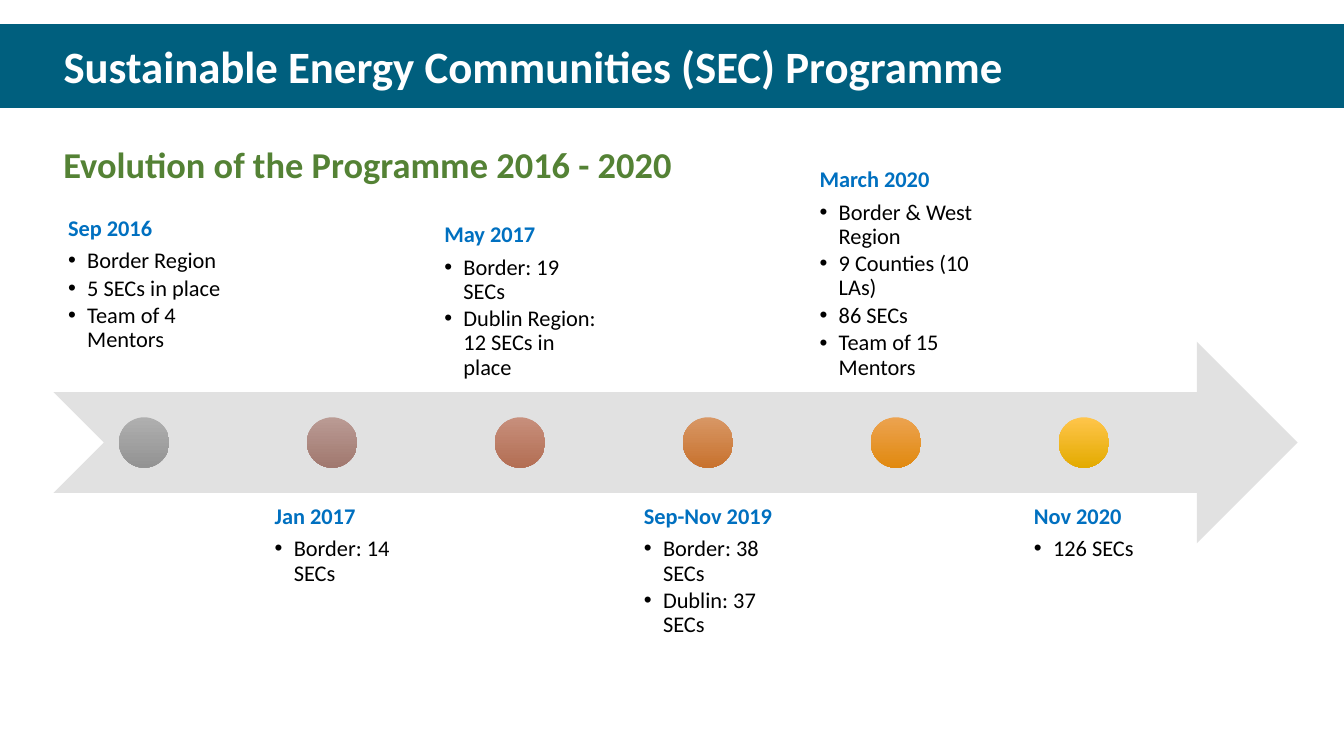
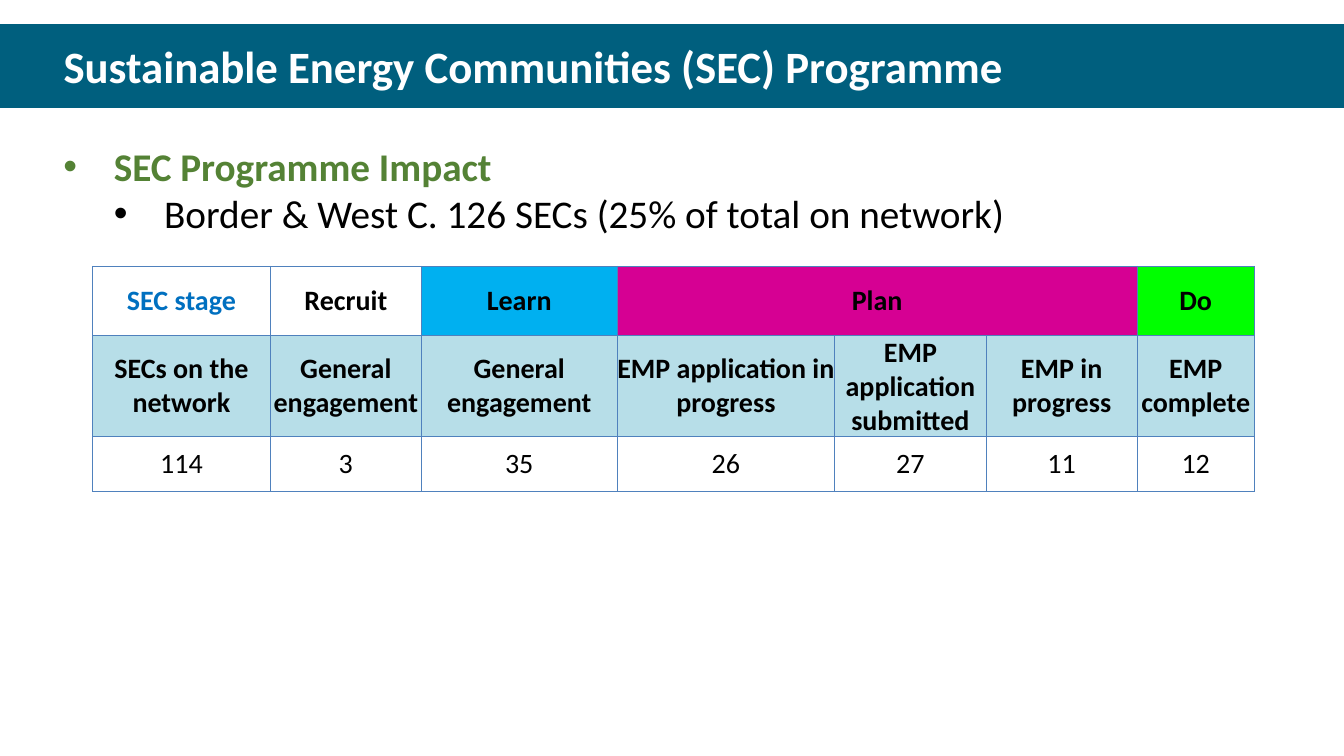
from pptx import Presentation
from pptx.dml.color import RGBColor
from pptx.enum.shapes import MSO_SHAPE as Preset
from pptx.enum.text import MSO_ANCHOR as Anchor, MSO_AUTO_SIZE as AutoSize, PP_ALIGN as Align
from pptx.oxml.ns import qn
from pptx.util import Inches, Pt
from lxml.etree import SubElement

FONT = "Calibri"
TEAL, GREEN, BLUE = "005F7E", "548235", "0070C0"
WHITE, BLACK, ARROW_GREY, BORDER = "FFFFFF", "000000", "E1E1E1", "4F81BD"
WIDTH, HEIGHT = 13.33, 7.5
MARGIN, CONTENT_WIDTH, BODY_TOP = 0.53, 12.34, 1.36

TITLE = "Sustainable Energy Communities (SEC) Programme"
SUBTITLE = "Evolution of the Programme 2016 - 2020"

# date, points, gradient top and bottom, bottom inset
MILESTONES = [
    ("Sep 2016", ["Border Region", "5 SECs in place", "Team of 4 Mentors"],
     ("AFAFAF", "939393"), 0.39),
    ("Jan 2017", ["Border: 14 SECs"], ("BA9B94", "A1786F"), 0.12),
    ("May 2017", ["Border: 19 SECs", "Dublin Region: 12 SECs in place"],
     ("C78F7C", "B36E53"), 0.12),
    ("Sep-Nov 2019", ["Border: 38 SECs", "Dublin: 37 SECs"],
     ("D89765", "C8722E"), 0.12),
    ("March 2020", ["Border & West Region", "9 Counties (10 LAs)", "86 SECs",
                    "Team of 15 Mentors"], ("ECA350", "E1890F"), 0.12),
    ("Nov 2020", ["126 SECs"], ("FFC54B", "E3AB00"), 0.12),
]

IMPACT = "SEC Programme Impact"
IMPACT_DETAIL = "Border & West C. 126 SECs (25% of total on network)"
STAGES = [
    ["SEC stage", "Recruit", "Learn", "Plan", "", "", "Do"],
    ["SECs on the network", "General engagement", "General engagement",
     "EMP application in progress", "EMP application submitted",
     "EMP in progress", "EMP complete"],
    ["114", "3", "35", "26", "27", "11", "12"],
]
STAGE_FILLS = [
    [None, None, "00B0F0", "D60093", "D60093", "D60093", "00FF00"],
    ["B7DEE8"] * 7,
    [None] * 7,
]
COLUMN_WIDTHS = [1.76, 1.5, 1.94, 2.16, 1.5, 1.5, 1.16]
ROW_HEIGHTS = [0.69, 1, 0.54]


def rgb(value):
    return RGBColor.from_string(value)


def add_span(para, text, size, color, bold=False):
    span = para.add_run()
    span.text = text
    font = span.font
    font.name, font.size, font.bold = FONT, Pt(size), bold
    font.color.rgb = rgb(color)


def add_bullet(para, indent, hang):
    props = para._p.get_or_add_pPr()
    props.set("marL", str(Inches(indent)))
    props.set("indent", str(-Inches(hang)))
    SubElement(props, qn("a:buFont")).set("typeface", "Arial")
    SubElement(props, qn("a:buChar")).set("char", "•")


def add_text_box(page, left, top, width, height):
    box = page.shapes.add_textbox(*map(Inches, (left, top, width, height)))
    box.text_frame.word_wrap = True
    return box.text_frame


def add_shape(page, preset, left, top, width, height):
    shape = page.shapes.add_shape(preset, *map(Inches, (left, top, width, height)))
    shape.shadow.inherit = False
    shape.line.fill.background()
    return shape


def fill_solid(shape, color):
    shape.fill.solid()
    shape.fill.fore_color.rgb = rgb(color)


def add_page(deck):
    page = deck.slides.add_slide(deck.slide_layouts[5])
    title = page.shapes.title
    title.left, title.top = Inches(MARGIN), Inches(0.33)
    title.width, title.height = Inches(CONTENT_WIDTH), Inches(0.64)
    frame = title.text_frame
    frame.auto_size, frame.vertical_anchor = AutoSize.NONE, Anchor.MIDDLE
    para = frame.paragraphs[0]
    para.alignment = Align.LEFT
    add_span(para, TITLE, 32, WHITE, True)
    return page


def add_band_to_layout(page):
    """Draw the title band on the page, then move it to the shared layout."""
    band = add_shape(page, Preset.RECTANGLE, 0, 0.24, WIDTH, 0.83)
    fill_solid(band, TEAL)
    page.slide_layout.shapes.element.insert(2, band.element)


def add_milestone(page, index, date, points, colors, bottom_inset):
    dot_left = 1.18 + index * 9.32 / (len(MILESTONES) - 1)
    dot = add_shape(page, Preset.OVAL, dot_left, 4.14, 0.5, 0.5)
    dot.fill.gradient()
    dot.fill.gradient_angle = 270
    for stop, color, position in zip(dot.fill.gradient_stops, colors, (0, 1)):
        stop.color.rgb = rgb(color)
        stop.position = position

    above = index % 2 == 0
    frame = add_text_box(page, dot_left - 0.64, 1.89 if above else 4.89, 1.78, 2)
    frame.margin_left = frame.margin_right = frame.margin_top = Inches(0.12)
    frame.margin_bottom = Inches(bottom_inset)
    frame.vertical_anchor = Anchor.BOTTOM if above else Anchor.TOP
    frame._txBody.bodyPr.set("anchorCtr", "1")
    para = frame.paragraphs[0]
    para.line_spacing, para.space_after = 0.9, Pt(6)
    add_span(para, date, 16, BLUE, True)
    for point in points:
        para = frame.add_paragraph()
        para.line_spacing, para.space_after = 0.9, Pt(2.4)
        add_bullet(para, 0.19, 0.19)
        add_span(para, point, 16, BLACK)


def build_timeline(page):
    frame = add_text_box(page, MARGIN, BODY_TOP, 11.64, 0.54)
    add_span(frame.paragraphs[0], SUBTITLE, 26, GREEN, True)
    arrow = add_shape(page, Preset.NOTCHED_RIGHT_ARROW, MARGIN, 3.39, CONTENT_WIDTH, 2)
    fill_solid(arrow, ARROW_GREY)
    for index, milestone in enumerate(MILESTONES):
        add_milestone(page, index, *milestone)


def add_borders(cell):
    props = cell._tc.get_or_add_tcPr()
    for side in ("lnL", "lnR", "lnT", "lnB"):
        line = SubElement(props, qn(f"a:{side}"), w=str(Pt(0.5)))
        SubElement(SubElement(line, qn("a:solidFill")), qn("a:srgbClr"), val=BORDER)


def format_cell(cell, text, fill, color, bold):
    add_borders(cell)
    if fill:
        fill_solid(cell, fill)
    else:
        cell.fill.background()
    cell.margin_left = cell.margin_right = cell.margin_top = cell.margin_bottom = 0
    cell.vertical_anchor = Anchor.MIDDLE
    para = cell.text_frame.paragraphs[0]
    para.alignment = Align.CENTER
    if text:
        add_span(para, text, 20, color, bold)


def build_impact(page):
    frame = add_text_box(page, MARGIN, BODY_TOP, 12.02, 1.51)
    para = frame.paragraphs[0]
    add_bullet(para, 0.5, 0.5)
    add_span(para, IMPACT, 28, GREEN, True)
    para = frame.add_paragraph()
    para.level = 1
    add_bullet(para, 1, 0.5)
    add_span(para, IMPACT_DETAIL, 28, BLACK)

    size = (sum(COLUMN_WIDTHS), sum(ROW_HEIGHTS))
    table = page.shapes.add_table(len(STAGES), len(COLUMN_WIDTHS),
                                  *map(Inches, (0.92, 2.64, *size))).table
    table.first_row = table.horz_banding = False
    for column, width in zip(table.columns, COLUMN_WIDTHS):
        column.width = Inches(width)
    for row, height in zip(table.rows, ROW_HEIGHTS):
        row.height = Inches(height)
    table.cell(0, 3).merge(table.cell(0, 5))
    for r, (texts, fills) in enumerate(zip(STAGES, STAGE_FILLS)):
        for c, (text, fill) in enumerate(zip(texts, fills)):
            color = BLUE if r == c == 0 else BLACK
            format_cell(table.cell(r, c), text, fill, color, bold=r < 2)


def main():
    deck = Presentation()
    deck.slide_width, deck.slide_height = Inches(WIDTH), Inches(HEIGHT)
    timeline, impact = add_page(deck), add_page(deck)
    add_band_to_layout(timeline)
    build_timeline(timeline)
    build_impact(impact)
    deck.save("out.pptx")


if __name__ == "__main__":
    main()
